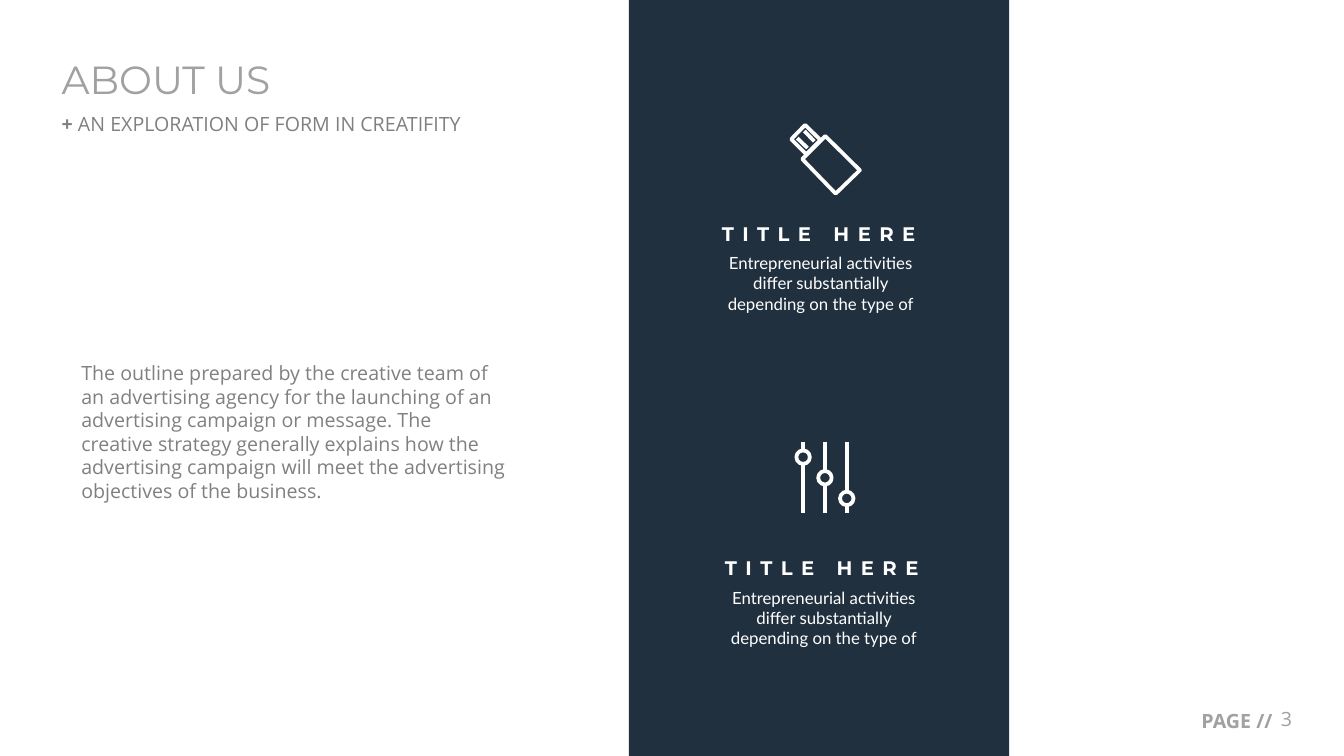
from dataclasses import dataclass

from lxml.etree import SubElement
from pptx import Presentation
from pptx.dml.color import RGBColor
from pptx.enum.shapes import MSO_CONNECTOR, MSO_SHAPE
from pptx.enum.text import MSO_ANCHOR, MSO_AUTO_SIZE, PP_ALIGN
from pptx.oxml.ns import qn
from pptx.util import Cm, Pt

COLORS = {"panel": "21303F", "white": "FFFFFF", "light": "A1A1A1", "gray": "808080"}
ICON_LINE = 2.7


@dataclass
class TextStyle:
    font: str
    size: float
    color: str
    bold: bool = False
    spacing: int = 0


@dataclass
class Box:
    left: float
    top: float
    width: float
    height: float

    def lengths(self) -> tuple:
        return Cm(self.left), Cm(self.top), Cm(self.width), Cm(self.height)


@dataclass
class Feature:
    left: float
    top: float
    heading: str
    description: str


HEADLINE = TextStyle("Montserrat", 28, "light")
BODY = TextStyle("Open Sans", 14, "gray")
BODY_BOLD = TextStyle("Open Sans", 14, "gray", bold=True)
PAGE_NUMBER = TextStyle("Open Sans", 14, "light")
PAGE_LABEL = TextStyle("Open Sans", 14, "light", bold=True)
FEATURE_TITLE = TextStyle("Montserrat", 14, "white", bold=True, spacing=600)
FEATURE_TEXT = TextStyle("Lato", 12, "white")

DESCRIPTION = "Entrepreneurial activities differ substantially depending on the type of"
FEATURES = [
    Feature(17.88, 6.25, "TITLE HERE", DESCRIPTION),
    Feature(17.96, 14.68, "TITLE HERE", DESCRIPTION),
]
OUTLINE = (
    "The outline prepared by the creative team of an advertising agency for the "
    "launching of an advertising campaign or message. The creative strategy "
    "generally explains how the advertising campaign will meet the advertising "
    "objectives of the business."
)

# USB stick outlines and the slots in its plug
USB_OUTLINES = [
    [(20.29, 3.15), (19.94, 3.51), (20.32, 3.89), (20.68, 3.53)],
    [(20.80, 3.43), (20.22, 4.01), (21.06, 4.88), (21.67, 4.29)],
]
USB_SLOTS = [(20.09, 3.48, 20.35, 3.73), (20.27, 3.30, 20.52, 3.56)]

# Slider icon: three rails, each with a knob one step lower
RAIL_TOP, RAIL_BOTTOM = 11.15, 12.93
FIRST_RAIL, RAIL_STEP = 20.24, 0.55
FIRST_KNOB, KNOB_STEP = 11.52, 0.52
KNOB_RADIUS = 0.17


def rgb(name: str) -> RGBColor:
    return RGBColor.from_string(COLORS[name])


def add_run(paragraph, text: str, style: TextStyle) -> None:
    run = paragraph.add_run()
    run.text = text
    formats = {"name": style.font, "size": Pt(style.size), "bold": style.bold}
    for attribute, value in formats.items():
        setattr(run.font, attribute, value)
    run.font.color.rgb = rgb(style.color)
    if style.spacing:
        run._r.get_or_add_rPr().set("spc", str(style.spacing))


def add_text(slide, box: Box, text: str, style: TextStyle,
             alignment=PP_ALIGN.LEFT, wrap: bool = True) -> None:
    frame = slide.shapes.add_textbox(*box.lengths()).text_frame
    frame.word_wrap = wrap
    frame.auto_size = MSO_AUTO_SIZE.SHAPE_TO_FIT_TEXT
    frame.paragraphs[0].alignment = alignment
    add_run(frame.paragraphs[0], text, style)


def fill_placeholder(placeholder, box: Box, runs: list, anchor, space_before: float) -> None:
    for attribute, value in zip(("left", "top", "width", "height"), box.lengths()):
        setattr(placeholder, attribute, value)
    frame = placeholder.text_frame
    frame.vertical_anchor = anchor
    frame.auto_size = MSO_AUTO_SIZE.NONE
    paragraph = frame.paragraphs[0]
    formats = {"alignment": PP_ALIGN.LEFT, "line_spacing": 0.9,
               "space_before": Pt(space_before)}
    for attribute, value in formats.items():
        setattr(paragraph, attribute, value)
    properties = paragraph._p.get_or_add_pPr()
    properties.set("marL", "0")
    properties.set("indent", "0")
    SubElement(properties, qn("a:buNone"))
    for text, style in runs:
        add_run(paragraph, text, style)


def style_icon_line(shape) -> None:
    shape.line.color.rgb = rgb("white")
    shape.line.width = Pt(ICON_LINE)


def add_icon_line(group, x1: float, y1: float, x2: float, y2: float) -> None:
    connector = group.shapes.add_connector(
        MSO_CONNECTOR.STRAIGHT, Cm(x1), Cm(y1), Cm(x2), Cm(y2))
    style_icon_line(connector)
    SubElement(connector._element.spPr, qn("a:effectLst"))


def style_icon_outline(shape) -> None:
    shape.fill.background()
    style_icon_line(shape)
    SubElement(shape._element.spPr.find(qn("a:ln")), qn("a:round"))
    shape.shadow.inherit = False


def add_usb_icon(slide) -> None:
    group = slide.shapes.add_group_shape()
    for outline in USB_OUTLINES:
        start, *others = [(Cm(x), Cm(y)) for x, y in outline]
        builder = group.shapes.build_freeform(*start)
        builder.add_line_segments(others, close=True)
        style_icon_outline(builder.convert_to_shape())
    for slot in USB_SLOTS:
        add_icon_line(group, *slot)


def add_slider_icon(slide) -> None:
    group = slide.shapes.add_group_shape()
    for index in range(3):
        x = FIRST_RAIL + index * RAIL_STEP
        y = FIRST_KNOB + index * KNOB_STEP
        add_icon_line(group, x, RAIL_TOP, x, y - KNOB_RADIUS)
        add_icon_line(group, x, y + KNOB_RADIUS, x, RAIL_BOTTOM)
        knob = Box(x - KNOB_RADIUS, y - KNOB_RADIUS, 2 * KNOB_RADIUS, 2 * KNOB_RADIUS)
        style_icon_outline(group.shapes.add_shape(MSO_SHAPE.OVAL, *knob.lengths()))


def add_feature(slide, feature: Feature) -> None:
    add_text(slide, Box(feature.left, feature.top, 5.61, 1.8),
             feature.description, FEATURE_TEXT, PP_ALIGN.CENTER)
    add_text(slide, Box(feature.left + 0.06, feature.top - 0.79, 5.56, 0.86),
             feature.heading, FEATURE_TITLE, wrap=False)


def main() -> None:
    presentation = Presentation()
    presentation.slide_width, presentation.slide_height = Cm(33.87), Cm(19.05)
    slide = presentation.slides.add_slide(presentation.slide_layouts[1])

    # Title and subtitle
    fill_placeholder(slide.shapes.title, Box(1.3, 1.27, 31.55, 1.57),
                     [("ABOUT US", HEADLINE)], MSO_ANCHOR.MIDDLE, 0)
    fill_placeholder(slide.placeholders[1], Box(1.3, 2.77, 31.55, 1.22),
                     [("+", BODY_BOLD), (" AN EXPLORATION OF FORM IN CREATIFITY", BODY)],
                     MSO_ANCHOR.TOP, 10)

    # Dark panel with icons and features
    panel = slide.shapes.add_shape(MSO_SHAPE.RECTANGLE, *Box(15.85, 0, 9.58, 19.05).lengths())
    panel.fill.solid()
    panel.fill.fore_color.rgb = rgb("panel")
    panel.line.fill.background()
    panel.shadow.inherit = False
    add_usb_icon(slide)
    add_slider_icon(slide)
    for feature in FEATURES:
        add_feature(slide, feature)

    # Description and page number
    add_text(slide, Box(1.8, 8.97, 11.25, 3.84), OUTLINE, BODY)
    add_text(slide, Box(31.52, 17.68, 1.8, 0.86), "3", PAGE_NUMBER, PP_ALIGN.CENTER)
    add_text(slide, Box(30.02, 17.73, 2.31, 0.86), "PAGE //", PAGE_LABEL,
             PP_ALIGN.CENTER, wrap=False)

    presentation.save("out.pptx")


if __name__ == "__main__":
    main()
